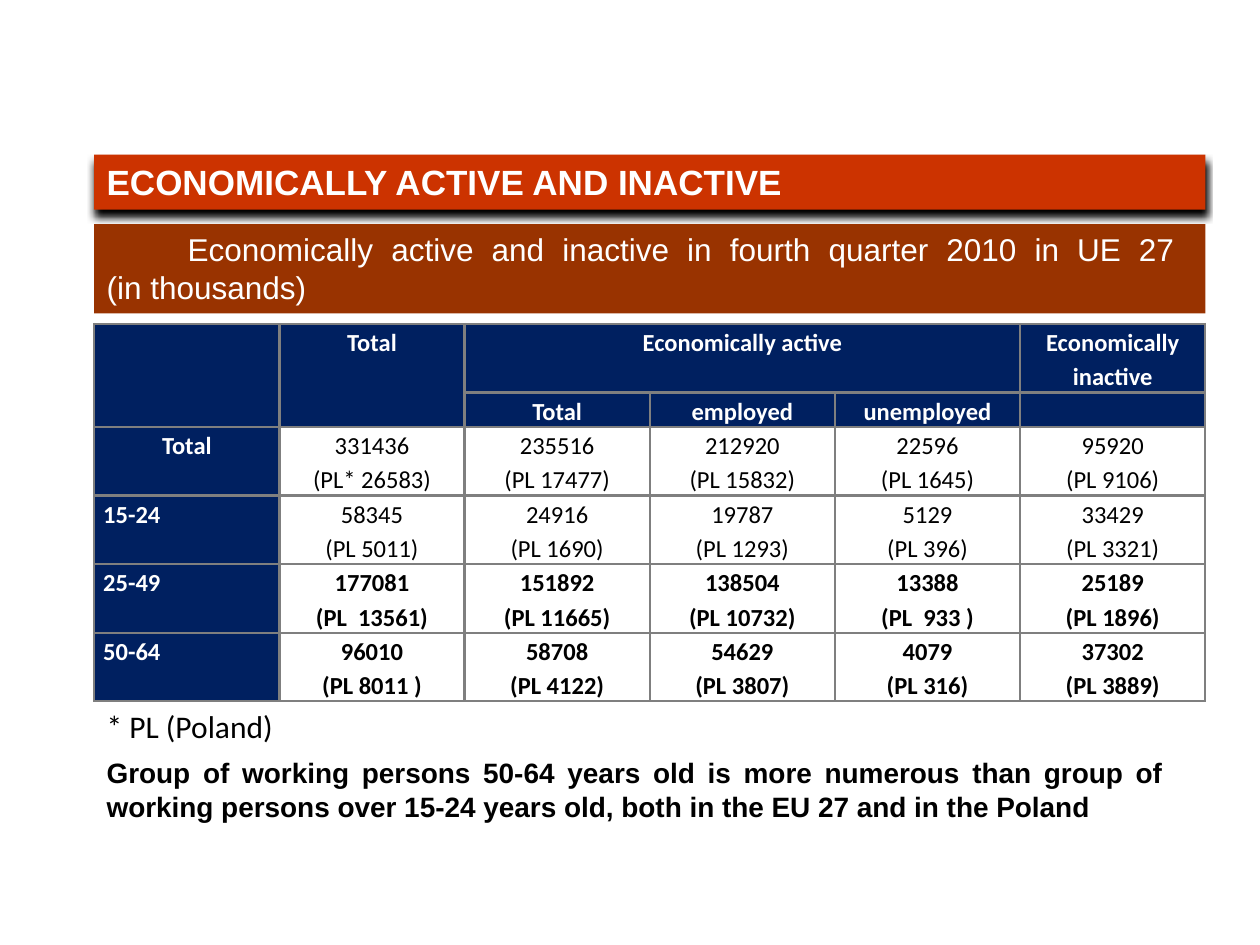
from pptx import Presentation
from pptx.dml.color import RGBColor as Rgb
from pptx.enum.shapes import MSO_SHAPE as Shape
from pptx.enum.text import MSO_ANCHOR as Anchor, PP_ALIGN as Align
from pptx.oxml import parse_xml
from pptx.oxml.ns import nsdecls
from pptx.util import Cm, Pt

COLORS = {"title": "CC3300", "band": "993300", "head": "002060",
          "grid": "7F7F7F", "white": "FFFFFF", "black": "000000"}

# (label, bold values, pairs of EU and Poland figures)
ROWS = [
    ("Total", False, [("331436", "(PL* 26583)"), ("235516", "(PL 17477)"),
                      ("212920", "(PL 15832)"), ("22596", "(PL 1645)"),
                      ("95920", "(PL 9106)")]),
    ("15-24", False, [("58345", "(PL 5011)"), ("24916", "(PL 1690)"),
                      ("19787", "(PL 1293)"), ("5129", "(PL 396)"),
                      ("33429", "(PL 3321)")]),
    ("25-49", True, [("177081", "(PL  13561)"), ("151892", "(PL 11665)"),
                     ("138504", "(PL 10732)"), ("13388", "(PL  933 )"),
                     ("25189", "(PL 1896)")]),
    ("50-64", True, [("96010", "(PL 8011 )"), ("58708", "(PL 4122)"),
                     ("54629", "(PL 3807)"), ("4079", "(PL 316)"),
                     ("37302", "(PL 3889)")]),
]
HEADS = [["", "Total", "Economically active", "", "", "Economically inactive"],
         ["", "", "Total", "employed", "unemployed", ""]]


def rgb(name):
    return Rgb.from_string(COLORS[name])


def write(frame, *lines, size=14, font="Calibri", color="black", bold=False,
          align=Align.LEFT, spacing=None):
    """Fill a text frame with one paragraph for each line."""
    frame.word_wrap = True
    for i, line in enumerate(lines):
        para = frame.paragraphs[0] if i == 0 else frame.add_paragraph()
        para.alignment = align
        if spacing:
            para.line_spacing = spacing
        if not line:  # an empty line keeps the height of its font
            para._p.append(parse_xml(
                f'<a:endParaRPr {nsdecls("a")} sz="{size * 100}"/>'))
            continue
        para.text = line
        for run in para.runs:
            run.font.size, run.font.name = Pt(size), font
            run.font.bold = bold
            run.font.color.rgb = rgb(color)


def add_bar(slide, box, text, fill, **style):
    bar = slide.shapes.add_shape(Shape.RECTANGLE, *map(Cm, box))
    bar.shadow.inherit = False
    bar.fill.solid()
    bar.fill.fore_color.rgb = rgb(fill)
    bar.line.fill.background()
    bar.text_frame.vertical_anchor = Anchor.TOP
    write(bar.text_frame, text, font="Arial", color="white",
          align=Align.JUSTIFY, **style)
    return bar


def add_shadow(shape):
    effects = shape._element.spPr.find(
        "{http://schemas.openxmlformats.org/drawingml/2006/main}effectLst")
    effects.append(parse_xml(
        f'<a:outerShdw {nsdecls("a")} blurRad="{Pt(4)}" dist="{Pt(4)}" '
        f'dir="5400000" rotWithShape="0">'
        f'<a:srgbClr val="{COLORS["black"]}"/></a:outerShdw>'))


def add_note(slide, box, text, **style):
    note = slide.shapes.add_textbox(*map(Cm, box))
    write(note.text_frame, text, **style)


def set_cell(cell, *lines, fill=None, **style):
    cell.margin_left = cell.margin_right = Cm(0.18)
    cell.margin_top = cell.margin_bottom = 0
    props = cell._tc.get_or_add_tcPr()
    for side in "LRTB":
        props.append(parse_xml(
            f'<a:ln{side} {nsdecls("a")} w="{Pt(1.5)}"><a:solidFill>'
            f'<a:srgbClr val="{COLORS["grid"]}"/></a:solidFill></a:ln{side}>'))
    if fill:
        cell.fill.solid()
        cell.fill.fore_color.rgb = rgb(fill)
    else:
        cell.fill.background()
    write(cell.text_frame, *lines, spacing=1.15, **style)


def add_grid(slide, box):
    count = len(HEADS) + len(ROWS)
    cols = len(HEADS[0])
    table = slide.shapes.add_table(count, cols, *map(Cm, box)).table
    table.first_row = table.horz_banding = False
    unit = box[3] / (2 * count - 1)  # height of one text line
    for i, row in enumerate(table.rows):
        row.height = Cm(unit if i == 1 else 2 * unit)
    for col in table.columns:
        col.width = Cm(box[2] / cols)

    # Header rows
    dark = {"fill": "head", "color": "white", "bold": True}
    for r, heads in enumerate(HEADS):
        for c, text in enumerate(heads):
            set_cell(table.cell(r, c), text, align=Align.CENTER, **dark)
    for c in (0, 1):
        table.cell(0, c).merge(table.cell(1, c))
    table.cell(0, 2).merge(table.cell(0, 4))

    # Age groups
    for r, (label, bold, pairs) in enumerate(ROWS, len(HEADS)):
        align = Align.CENTER if label == "Total" else Align.JUSTIFY
        set_cell(table.cell(r, 0), label, align=align, **dark)
        for c, pair in enumerate(pairs, 1):
            set_cell(table.cell(r, c), *pair, bold=bold, align=Align.CENTER)
    table.cell(count - 1, 1).vertical_anchor = Anchor.MIDDLE


def main():
    deck = Presentation()
    deck.slide_width, deck.slide_height = Cm(25.4), Cm(19.05)
    slide = deck.slides.add_slide(deck.slide_layouts[6])
    left, width = 1.9, 22.4

    # Title and subtitle
    title = add_bar(slide, (left, 3.12, width, 1.11),
                    "ECONOMICALLY ACTIVE AND INACTIVE", "title",
                    size=20, bold=True)
    add_shadow(title)
    add_bar(slide, (left, 4.52, width, 1.8),
            "\t Economically active and inactive in fourth quarter 2010 "
            "in UE 27 \v(in thousands)", "band", size=18)

    # Table
    add_grid(slide, (left, 6.53, width, 7.48))

    # Notes
    add_note(slide, (left, 14.12, 12, 1.02), "* PL (Poland)", size=18)
    add_note(slide, (left, 15.11, 21.8, 1.62),
             "Group of working persons 50-64 years old is more numerous than "
             "group of working persons over 15-24 years old, both in the "
             "EU 27 and in the Poland",
             size=16, font="Arial", bold=True, align=Align.JUSTIFY)
    deck.save("out.pptx")


if __name__ == "__main__":
    main()
